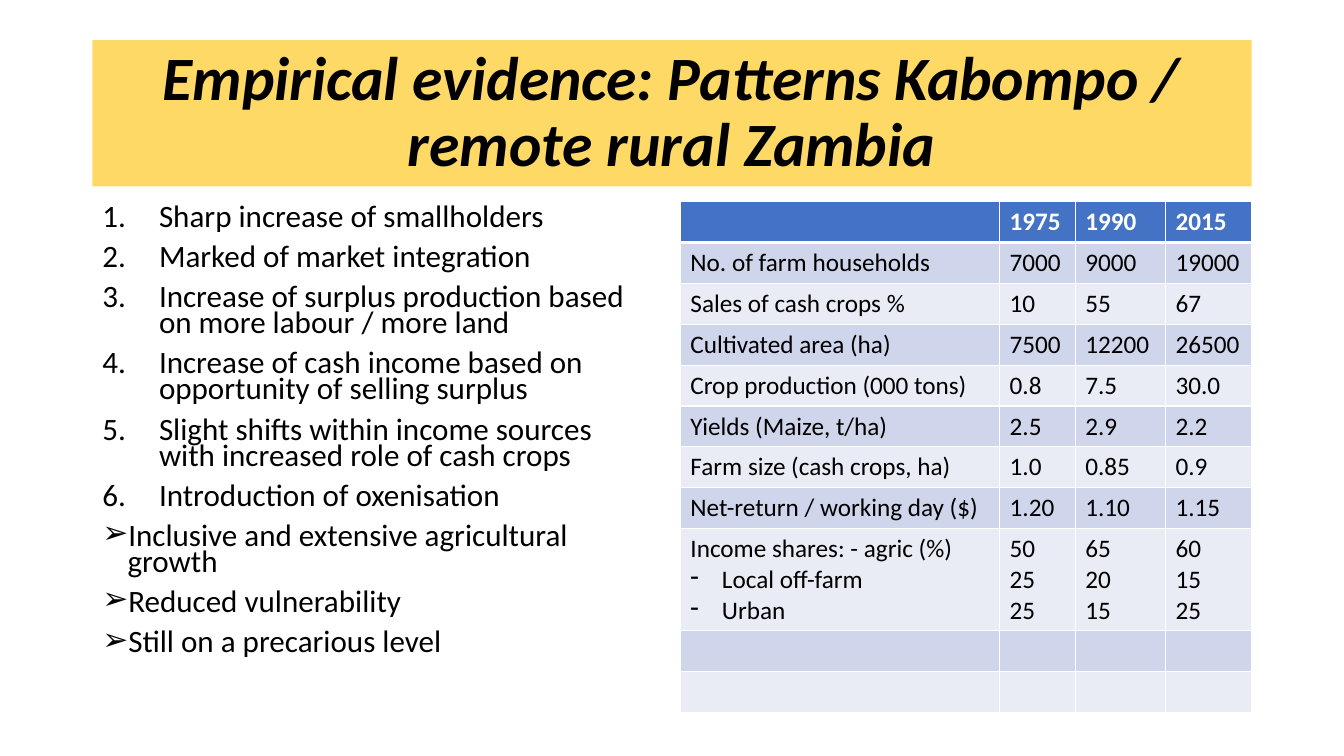
from lxml import etree
from pptx import Presentation
from pptx import util as u
from pptx.dml.color import RGBColor
from pptx.enum import text
from pptx.oxml import ns

TITLE = "Empirical evidence: Patterns Kabompo / remote rural Zambia"
FINDINGS = [
    "Sharp increase of smallholders",
    "Marked of market integration",
    "Increase of surplus production based on more labour / more land",
    "Increase of cash income based on opportunity of selling surplus",
    "Slight shifts within income sources with increased role of cash crops",
    "Introduction of oxenisation",
]
CONCLUSIONS = [
    "Inclusive and extensive agricultural growth",
    "Reduced vulnerability",
    "Still on a precarious level",
]
INDICATORS = [
    ("", "1975", "1990", "2015"),
    ("No. of farm households", "7000", "9000", "19000"),
    ("Sales of cash crops %", "10", "55", "67"),
    ("Cultivated area (ha)", "7500", "12200", "26500"),
    ("Crop production (000 tons)", "0.8", "7.5", "30.0"),
    ("Yields (Maize, t/ha)", "2.5", "2.9", "2.2"),
    ("Farm size (cash crops, ha)", "1.0", "0.85", "0.9"),
    ("Net-return / working day ($)", "1.20", "1.10", "1.15"),
    (("Income shares: - agric (%)", "Local off-farm", "Urban"),
     ("50", "25", "25"), ("65", "20", "15"), ("60", "15", "25")),
    ("", "", "", ""),
    ("", "", "", ""),
]
COLORS = {"banner": "FFD966", "header": "4472C4", "odd": "CFD5EA",
          "even": "E9EBF5", "white": "FFFFFF", "black": "000000"}
FONT = "Calibri"
LEFT, TABLE_LEFT, CONTENT_TOP = 66, 486, 144
COLUMN_WIDTHS = [228, 54, 64.5, 61.5]
ROW_HEIGHT, TALL_ROW_HEIGHT = 29.2, 72.8


def color(name):
    return RGBColor.from_string(COLORS[name])


def add_element(parent, tag, **attributes):
    return etree.SubElement(parent, ns.qn(tag), attributes)


def write(paragraph, content, size=18, ink="black", bold=False, italic=False,
          align=None, spacing=None, before=None, bullet=None, indent=0):
    run = paragraph.add_run()
    run.text = content
    run.font.name, run.font.size = FONT, u.Pt(size)
    run.font.bold, run.font.italic = bold, italic
    run.font.color.rgb = color(ink)
    paragraph.alignment = align
    paragraph.line_spacing = spacing
    if before is not None:
        paragraph.space_before = u.Pt(before)
    if bullet:
        properties = paragraph._p.get_or_add_pPr()
        properties.set("marL", str(u.Pt(indent)))
        properties.set("indent", str(-u.Pt(indent)))
        if bullet == "number":
            add_element(properties, "a:buFont", typeface=FONT)
            add_element(properties, "a:buAutoNum", type="arabicPeriod")
        else:
            add_element(properties, "a:buChar", char=bullet)


def next_paragraph(frame, index):
    return frame.add_paragraph() if index else frame.paragraphs[0]


def add_borders(cell, bottom):
    properties = cell._tc.get_or_add_tcPr()
    for side, width in (("L", 1), ("R", 1), ("T", 1), ("B", bottom)):
        line = add_element(properties, f"a:ln{side}", w=str(u.Pt(width)))
        fill = add_element(line, "a:solidFill")
        add_element(fill, "a:srgbClr", val=COLORS["white"])


def add_title(slide):
    title = slide.shapes.title
    title.left, title.top = u.Pt(LEFT), u.Pt(28.75)
    title.width, title.height = u.Pt(828), u.Pt(104.4)
    title.fill.solid()
    title.fill.fore_color.rgb = color("banner")
    frame = title.text_frame
    frame.word_wrap = True
    frame.auto_size = text.MSO_AUTO_SIZE.NONE
    frame.vertical_anchor = text.MSO_ANCHOR.MIDDLE
    write(frame.paragraphs[0], TITLE, size=44, bold=True, italic=True,
          align=text.PP_ALIGN.CENTER, spacing=0.9)


def add_findings(slide):
    box = slide.shapes.add_textbox(u.Pt(LEFT), u.Pt(CONTENT_TOP), u.Pt(408), u.Pt(342.6))
    frame = box.text_frame
    frame.word_wrap = True
    items = [(item, "number", 40.5) for item in FINDINGS]
    items += [(item, "➢", 18) for item in CONCLUSIONS]
    for index, (item, bullet, indent) in enumerate(items):
        write(next_paragraph(frame, index), item, size=22.2, spacing=0.7,
              before=10, bullet=bullet, indent=indent)


def add_indicators(slide):
    heights = [TALL_ROW_HEIGHT if isinstance(row[0], tuple) else ROW_HEIGHT
               for row in INDICATORS]
    table = slide.shapes.add_table(
        len(INDICATORS), len(COLUMN_WIDTHS), u.Pt(TABLE_LEFT), u.Pt(CONTENT_TOP),
        u.Pt(sum(COLUMN_WIDTHS)), u.Pt(sum(heights))).table
    for column, width in zip(table.columns, COLUMN_WIDTHS):
        column.width = u.Pt(width)
    for row_index, values in enumerate(INDICATORS):
        table.rows[row_index].height = u.Pt(heights[row_index])
        header = row_index == 0
        band = "header" if header else "odd" if row_index % 2 else "even"
        for column_index, value in enumerate(values):
            cell = table.cell(row_index, column_index)
            add_borders(cell, bottom=3 if header else 1)
            cell.fill.solid()
            cell.fill.fore_color.rgb = color(band)
            lines = value if isinstance(value, tuple) else (value,)
            for index, line in enumerate(lines):
                if line:
                    dashed = index > 0 and column_index == 0
                    write(next_paragraph(cell.text_frame, index), line, bold=header,
                          ink="white" if header else "black",
                          bullet="-" if dashed else None, indent=22.5)


def main():
    presentation = Presentation()
    presentation.slide_width, presentation.slide_height = u.Pt(960), u.Pt(540)
    slide = presentation.slides.add_slide(presentation.slide_layouts[5])
    add_title(slide)
    add_findings(slide)
    add_indicators(slide)
    presentation.save("out.pptx")


if __name__ == "__main__":
    main()
